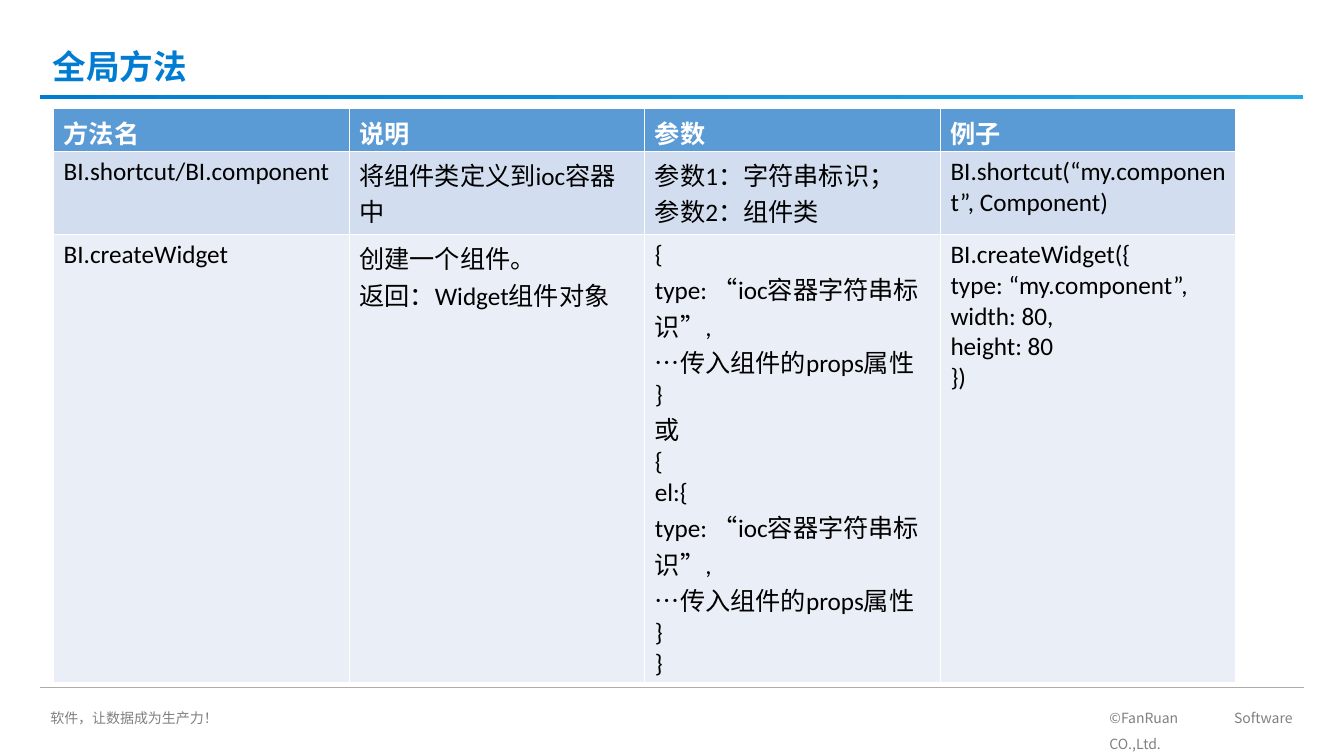
from pptx import Presentation
from pptx.dml.color import RGBColor
from pptx.enum.shapes import MSO_CONNECTOR, MSO_SHAPE
from pptx.enum.text import MSO_ANCHOR, MSO_AUTO_SIZE, PP_ALIGN
from pptx.oxml.ns import qn
from pptx.util import Cm, Pt
from lxml import etree

RECT, LINE = MSO_SHAPE.RECTANGLE, MSO_CONNECTOR.STRAIGHT
LEFT, JUST = PP_ALIGN.LEFT, PP_ALIGN.JUSTIFY
MIDDLE, FIXED = MSO_ANCHOR.MIDDLE, MSO_AUTO_SIZE.NONE
HAN = "Noto Sans CJK SC"
HEX = {"blue": "007DD2", "sky": "1EAAE6", "rule": "AFABAB", "gray": "808080",
       "white": "FFFFFF", "black": "000000",
       "head": "5B9BD5", "band": "D2DEEF", "pale": "EAEFF7"}


def color(name):
    return RGBColor.from_string(HEX[name])


def write(frame, text, hue, form, para={}):
    """Fill a frame, one paragraph per line, with font and paragraph formats."""
    frame.text = text
    for par in frame.paragraphs:
        for key, val in para.items():
            setattr(par, key, val)
        for run in par.runs:
            for key, val in form.items():
                setattr(run.font, key, val)
            run.font.color.rgb = color(hue)
            etree.SubElement(run.font._element, qn("a:ea"), typeface=HAN)


deck = Presentation()
deck.slide_width, deck.slide_height = Cm(33.87), Cm(19.05)
slide = deck.slides.add_slide(deck.slide_layouts[5])
shapes = slide.shapes

# Title
title = shapes.title
title.left, title.top, title.width, title.height = Cm(1.07), Cm(1.14), Cm(27.64), Cm(1.19)
frame = title.text_frame
frame.auto_size, frame.vertical_anchor = FIXED, MIDDLE
write(frame, "全局方法", "blue", {"name": HAN, "size": Pt(24), "bold": True},
      {"alignment": LEFT, "line_spacing": 0.9})

# Bar under the title
bar = shapes.add_shape(RECT, Cm(1), Cm(2.39), Cm(31.85), Cm(0.1))
bar.shadow.inherit = False
bar.line.fill.background()
bar.fill.gradient()
bar.fill.gradient_angle = 0
for stop, name, pos in zip(bar.fill.gradient_stops, ("blue", "sky"), (0, 1)):
    stop.color.rgb = color(name)
    stop.position = pos

# Footer
rule = shapes.add_connector(LINE, Cm(1), Cm(17.32), Cm(32.85), Cm(17.32))
rule.line.color.rgb = color("rule")
rule.line.width = Pt(0.5)
etree.SubElement(rule._element.spPr, qn("a:effectLst"))

for left, width, text in ((27.71, 5.11, "©FanRuan Software CO.,Ltd."),
                          (1.02, 4.78, "软件，让数据成为生产力！")):
    frame = shapes.add_textbox(Cm(left), Cm(17.55), Cm(width), Cm(0.84)).text_frame
    frame.word_wrap = True
    write(frame, text, "gray", {"name": HAN, "size": Pt(10)},
          {"alignment": JUST, "line_spacing": 1.5})

# Method table
inner = "type: “ioc容器字符串标识”,\n…传入组件的props属性\n}"
rows = [
    (1.07, "head", "white", ["方法名", "说明", "参数", "例子"]),
    (2.1, "band", "black", [
        "BI.shortcut/BI.component",
        "将组件类定义到ioc容器中",
        "参数1：字符串标识；\n参数2：组件类",
        "BI.shortcut(“my.component”, Component)"]),
    (11.3, "pale", "black", [
        "BI.createWidget",
        "创建一个组件。\n返回：Widget组件对象",
        "{\n" + inner + "\n或\n{\nel:{\n" + inner + "\n}",
        "BI.createWidget({\ntype: “my.component”,\nwidth: 80,\nheight: 80\n})"]),
]
table = shapes.add_table(3, 4, Cm(1.35), Cm(2.74), Cm(29.8), Cm(14.47)).table
for row, (high, fill, hue, texts) in zip(table.rows, rows):
    row.height = Cm(high)
    for cell, text in zip(row.cells, texts):
        cell.fill.solid()
        cell.fill.fore_color.rgb = color(fill)
        write(cell.text_frame, text, hue,
              {"name": "Calibri", "size": Pt(18), "bold": fill == "head"})

deck.save("out.pptx")
